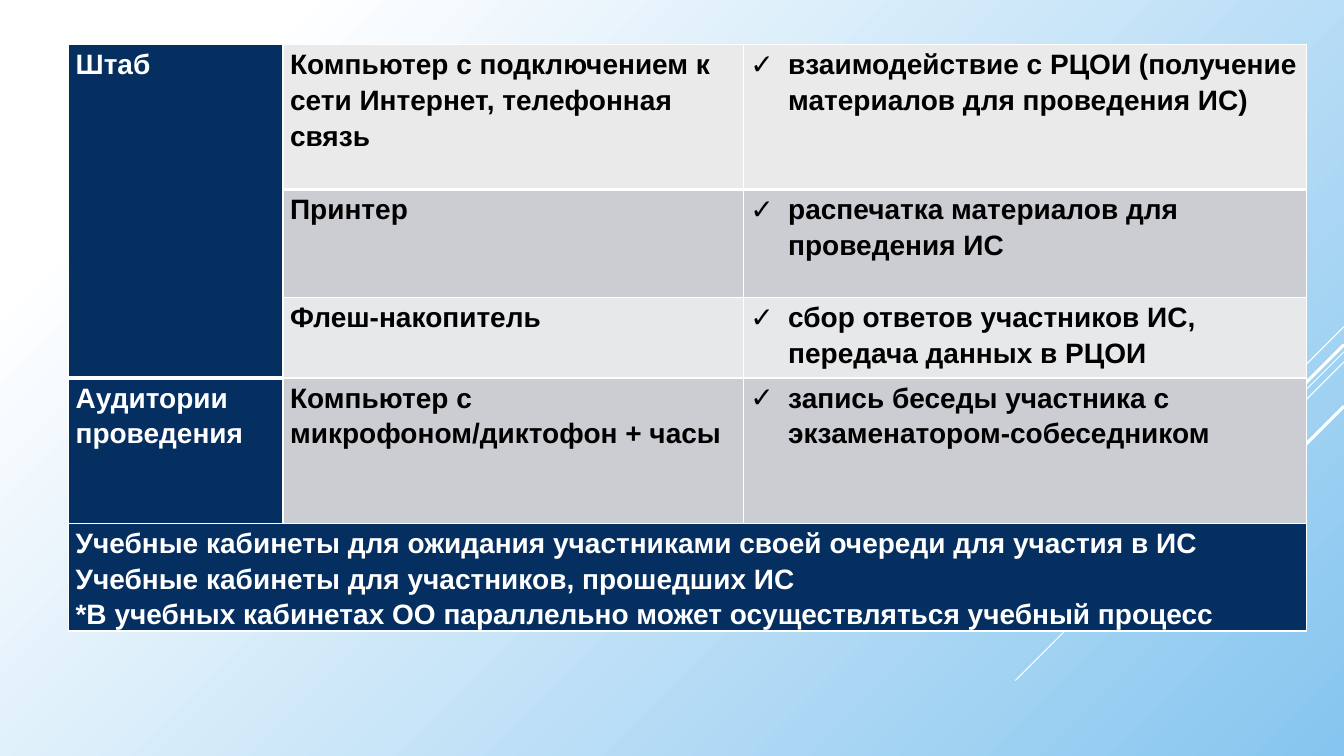
from dataclasses import dataclass

from lxml import etree
from pptx import Presentation
from pptx import util as u
from pptx.dml import color as c
from pptx.enum import shapes
from pptx.oxml import ns

Pt = u.Pt
RGB = c.RGBColor.from_string


@dataclass(frozen=True)
class Theme:
    navy: str = "052F61"
    white: str = "FFFFFF"
    black: str = "000000"
    sky: str = "86C5EF"
    light: str = "EAEAEA"
    pale: str = "E7E8EA"
    grey: str = "CCCDD2"
    font: str = "Arial"
    size: int = 20
    thin: float = 1
    thick: float = 3


T = Theme()
SLIDE_W, SLIDE_H = 960, 540
TABLE_LEFT, TABLE_TOP = 49, 31.7
COLUMNS = (153.2, 328.8, 402.4)
ROWS = (103.7, 77, 57.6, 103.7, 77)

# Diagonals from the right edge: start height, horizontal run, width
DIAGONALS = (
    (233.3, 72, 0.75),
    (251.3, 234.7, 0.75),
    (258.5, 149, 0.75),
    (246.2, 137.5, 2.25),
    (290.2, 100, 2.25),
)

# Equipment, its purpose, row fill
EQUIPMENT = (
    ("Компьютер с подключением к сети Интернет, телефонная связь",
     "взаимодействие с РЦОИ (получение материалов для проведения ИС)", T.light),
    ("Принтер", "распечатка материалов для проведения ИС", T.grey),
    ("Флеш-накопитель",
     "сбор ответов участников ИС, передача данных в РЦОИ", T.pale),
    ("Компьютер с микрофоном/диктофон + часы",
     "запись беседы участника с экзаменатором-собеседником", T.grey),
)
ROOMS = (
    "Учебные кабинеты для ожидания участниками своей очереди для участия в ИС",
    "Учебные кабинеты для участников, прошедших ИС",
    "*В учебных кабинетах ОО параллельно может осуществляться учебный процесс",
)


def add_child(parent, tag, **attrs):
    return etree.SubElement(parent, ns.qn(tag), **attrs)


def paint_background(s):
    fill = s.background.fill
    fill.gradient()
    fill.gradient_angle = 315
    for stop, position, color in zip(fill.gradient_stops, (0.14, 1), (T.white, T.sky)):
        stop.position = position
        stop.color.rgb = RGB(color)


def add_diagonal(s, top, run, width):
    line = s.shapes.add_connector(shapes.MSO_CONNECTOR.STRAIGHT, Pt(SLIDE_W), Pt(top),
                                  Pt(SLIDE_W - run), Pt(top + run))
    line.line.color.rgb = RGB(T.white)
    line.line.width = Pt(width)
    add_child(line._element.spPr, "a:effectLst")


def set_borders(cell, bottom):
    tcPr = cell._tc.get_or_add_tcPr()
    widths = {"L": T.thin, "R": T.thin, "T": T.thin, "B": bottom}
    for side, width in widths.items():
        ln = add_child(tcPr, f"a:ln{side}", w=str(Pt(width)))
        add_child(add_child(ln, "a:solidFill"), "a:srgbClr", val=T.white)


def add_check(p):
    pPr = p._p.get_or_add_pPr()
    pPr.set("marL", str(Pt(27)))
    pPr.set("indent", str(Pt(-27)))
    add_child(pPr, "a:buFont", typeface=T.font)
    add_child(pPr, "a:buChar", char="✓")


def fill_cell(cell, lines, fill, color, check=False):
    cell.fill.solid()
    cell.fill.fore_color.rgb = RGB(fill)
    tf = cell.text_frame
    for i, line in enumerate(lines):
        p = tf.add_paragraph() if i else tf.paragraphs[0]
        p.line_spacing = 1.15
        if check:
            add_check(p)
        r = p.add_run()
        r.text = line
        r.font.name = T.font
        r.font.size = Pt(T.size)
        r.font.bold = True
        r.font.color.rgb = RGB(color)


def add_grid(s):
    table = s.shapes.add_table(len(ROWS), len(COLUMNS), Pt(TABLE_LEFT), Pt(TABLE_TOP),
                               Pt(sum(COLUMNS)), Pt(sum(ROWS))).table
    table.first_row = table.horz_banding = False
    for column, width in zip(table.columns, COLUMNS):
        column.width = Pt(width)
    for i, (row, height) in enumerate(zip(table.rows, ROWS)):
        row.height = Pt(height)
        for cell in row.cells:
            cell.margin_left = cell.margin_right = Pt(5)
            cell.margin_top = cell.margin_bottom = 0
            set_borders(cell, T.thin if i else T.thick)
    return table


def main():
    prs = Presentation()
    prs.slide_width, prs.slide_height = Pt(SLIDE_W), Pt(SLIDE_H)
    s = prs.slides.add_slide(prs.slide_layouts[6])

    # Backdrop
    paint_background(s)
    for diagonal in DIAGONALS:
        add_diagonal(s, *diagonal)

    # Equipment by room
    table = add_grid(s)
    table.cell(0, 0).merge(table.cell(2, 0))
    table.cell(4, 0).merge(table.cell(4, 2))
    for i, (device, purpose, fill) in enumerate(EQUIPMENT):
        fill_cell(table.cell(i, 1), [device], fill, T.black)
        fill_cell(table.cell(i, 2), [purpose], fill, T.black, check=True)

    # Room headings and closing notes
    headings = {0: ["Штаб"], 3: ["Аудитории проведения"], 4: ROOMS}
    for i, lines in headings.items():
        fill_cell(table.cell(i, 0), lines, T.navy, T.white)

    prs.save("out.pptx")


if __name__ == "__main__":
    main()
